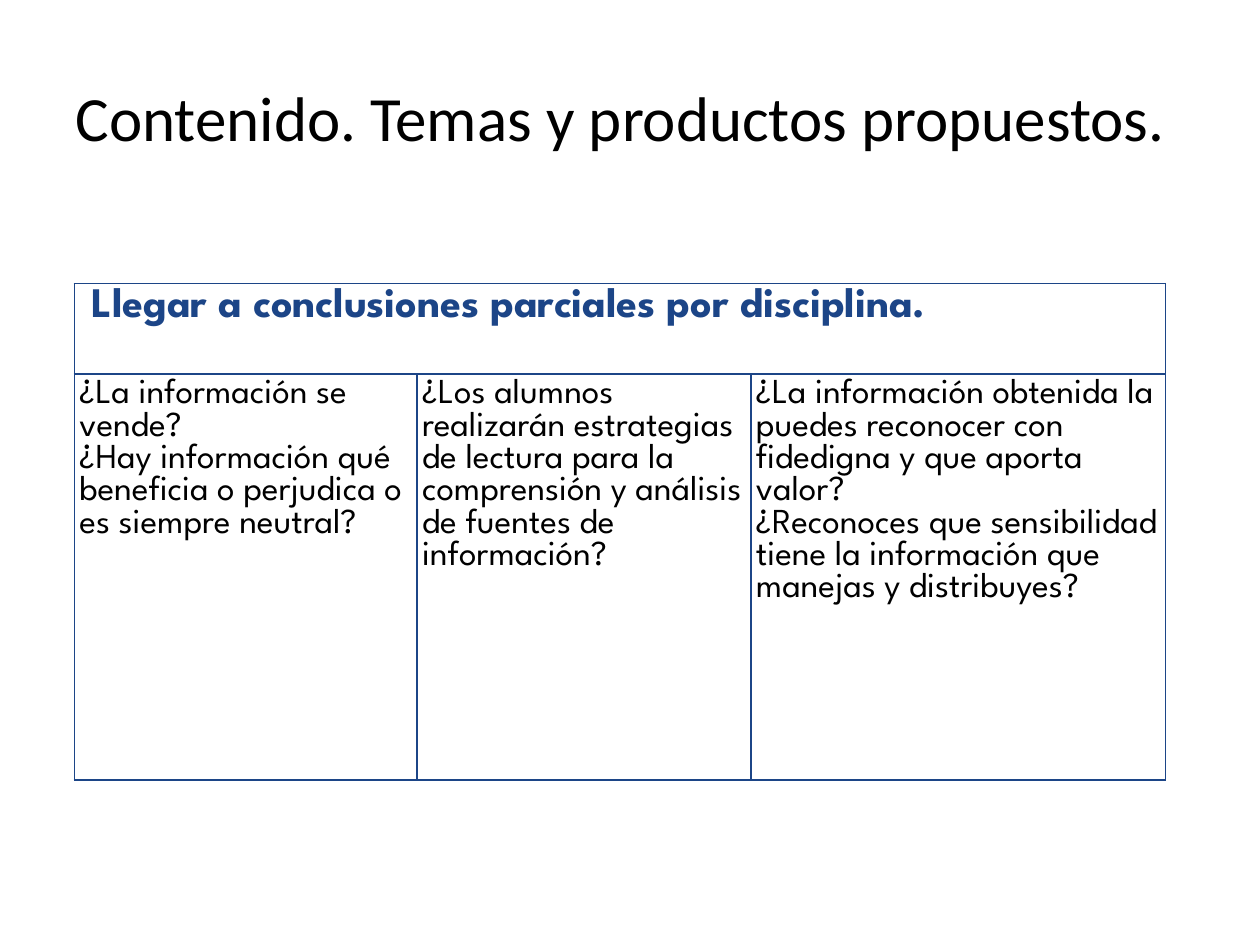
import pptx
import pptx.util
import pptx.dml.color
import pptx.enum.text
import pptx.oxml
import pptx.oxml.ns

Pt = pptx.util.Pt
COLORS = {"ink": "000000", "navy": "1C4587", "paper": "FFFFFF"}
TITLE_FONT, TABLE_FONT = "Calibri", "League Spartan"


class SlideBuilder:
    def __init__(self, slide):
        self.slide = slide
        self.cell_margin = Pt(2.9)
        self.border_width = Pt(1)

    def run(self, paragraph, text, font, size, color, bold=False):
        run = paragraph.add_run()
        run.text = text
        run.font.name = font
        run.font.size = Pt(size)
        run.font.bold = bold
        run.font.color.rgb = pptx.dml.color.RGBColor.from_string(COLORS[color])

    def title(self, text, left, top, width, height):
        heading = self.slide.shapes.title
        heading.left, heading.top = Pt(left), Pt(top)
        heading.width, heading.height = Pt(width), Pt(height)
        frame = heading.text_frame
        frame.vertical_anchor = pptx.enum.text.MSO_ANCHOR.MIDDLE
        frame.paragraphs[0].alignment = pptx.enum.text.PP_ALIGN.JUSTIFY
        self.run(frame.paragraphs[0], text, TITLE_FONT, 36, "ink")

    def table(self, left, top, widths, heights):
        grid = self.slide.shapes.add_table(
            len(heights), len(widths), Pt(left), Pt(top),
            Pt(sum(widths)), Pt(sum(heights))).table
        for column, width in zip(grid.columns, widths):
            column.width = Pt(width)
        for row, height in zip(grid.rows, heights):
            row.height = Pt(height)
        for cell in grid.iter_cells():
            self.style_cell(cell)
        return grid

    def style_cell(self, cell):
        cell.margin_left = cell.margin_right = self.cell_margin
        cell.margin_top = cell.margin_bottom = self.cell_margin
        # Borders come before the fill in the cell properties
        properties = cell._tc.get_or_add_tcPr()
        for side in ("lnL", "lnR", "lnT", "lnB"):
            properties.append(pptx.oxml.parse_xml(
                f'<a:{side} {pptx.oxml.ns.nsdecls("a")} w="{self.border_width}">'
                f'<a:solidFill><a:srgbClr val="{COLORS["navy"]}"/></a:solidFill>'
                f'</a:{side}>'))
        cell.fill.solid()
        cell.fill.fore_color.rgb = pptx.dml.color.RGBColor.from_string(COLORS["paper"])

    def cell_text(self, cell, lines, size, color, bold=False, indent=0):
        frame = cell.text_frame
        for index, line in enumerate(lines):
            paragraph = frame.add_paragraph() if index else frame.paragraphs[0]
            if indent:
                paragraph._p.get_or_add_pPr().set("marL", str(Pt(indent)))
            self.run(paragraph, line, TABLE_FONT, size, color, bold)


def main():
    deck = pptx.Presentation()
    deck.slide_width, deck.slide_height = Pt(720), Pt(540)
    builder = SlideBuilder(deck.slides.add_slide(deck.slide_layouts[5]))

    # Title
    builder.title("Contenido. Temas y productos propuestos.", 36, 21.6, 648, 90)

    # Table with a heading across all columns
    conclusions = builder.table(42.5, 162, [195.8, 190.8, 236.9], [51.8, 231.8])
    heading = conclusions.cell(0, 0)
    heading.merge(conclusions.cell(0, 2))
    builder.cell_text(heading, ["Llegar a conclusiones parciales por disciplina."],
                      24, "navy", bold=True, indent=7)

    # Questions by discipline
    questions = [
        ["¿La información se vende?",
         "¿Hay información qué beneficia o perjudica o es siempre neutral?"],
        ["¿Los alumnos realizarán estrategias de lectura para la comprensión "
         "y análisis de fuentes de información?"],
        ["¿La información obtenida la puedes reconocer con fidedigna y que "
         "aporta valor?",
         "¿Reconoces que sensibilidad tiene la información que manejas y "
         "distribuyes?"],
    ]
    for column, lines in enumerate(questions):
        builder.cell_text(conclusions.cell(1, column), lines, 20, "ink")

    deck.save("out.pptx")


if __name__ == "__main__":
    main()
